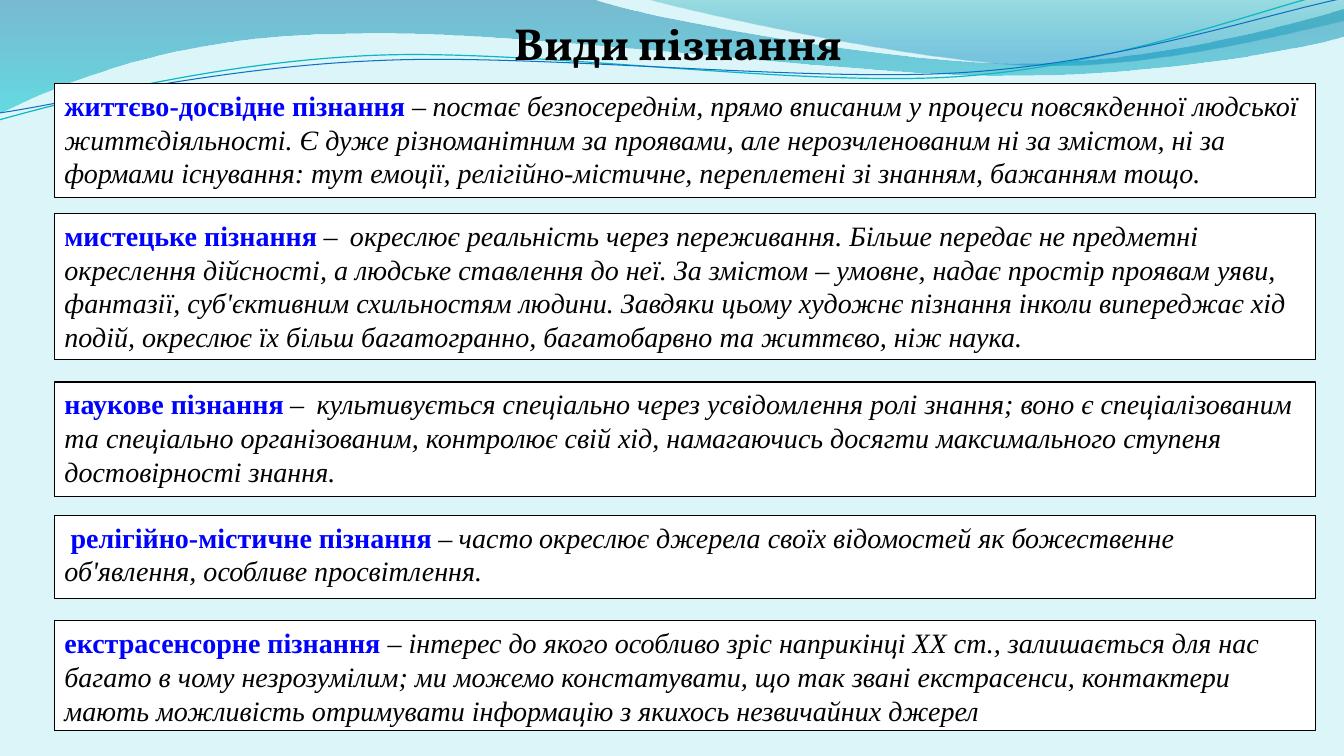
import math
from dataclasses import dataclass

from lxml import etree
from pptx import Presentation, util as u
from pptx.dml import color
from pptx.enum import shapes, text
from pptx.oxml import ns

LEFT, WIDTH = 0.54, 12.51

Point = tuple[float, float]


@dataclass
class Wave:
    start: Point
    segments: list[tuple[Point, ...]]
    stops: tuple[tuple[int, str, int], ...] = ()
    line: str = ""
    weight: float = 0
    turn: float = 0
    pivot: Point = (0, 0)


@dataclass
class Style:
    font: str
    size: int
    color: str
    bold: bool = False
    italic: bool = False


@dataclass
class Knowledge:
    top: float
    height: float
    runs: list[tuple[Style, str]]


BODY_FONT = "Times New Roman"
TITLE = Style("Vollkorn", 32, "000000", bold=True)
TERM = Style(BODY_FONT, 20, "0000FF", bold=True)
DASH = Style(BODY_FONT, 20, "000000")
BODY = Style(BODY_FONT, 20, "000000", italic=True)
GAP = Style("League Spartan", 18, "404040")
BOLD_GAP = Style("League Spartan", 18, "404040", bold=True)

WAVES = [
    Wave((0, -0.01), [
        ((5.87, -0.01),),
        ((6.34, 0.17), (8.85, 0.63), (10.11, 0.63)),
        ((11.38, 0.63), (12.78, 0.26), (13.33, 0.09)),
        ((13.35, 0.36),),
        ((13.11, 0.44), (11.6, 0.76), (9.94, 0.75)),
        ((8.29, 0.75), (5.09, 0.28), (3.43, 0.34)),
        ((1.72, 0.35), (0.61, 0.83), (-0.01, 1.13)),
        ((0, -0.01),),
    ], stops=((0, "0074A1", 45), (100, "00C6CF", 55))),
    Wave((6.39, -0.01), [
        ((6.79, 0.11), (9.09, 0.62), (10.25, 0.65)),
        ((11.41, 0.69), (12.82, 0.32), (13.33, 0.21)),
        ((13.33, 0),),
        ((6.39, -0.01),),
    ], stops=((0, "00A1A9", 30), (80, "008BBF", 45))),
    Wave((-0.01, 1.19), [
        ((0.64, 1.01), (2.11, 0.62), (3.69, 0.55)),
        ((5.27, 0.48), (7.9, 0.87), (9.5, 0.76)),
        ((11.1, 0.65), (12.52, 0.08), (13.31, -0.1)),
    ], line="0AB8BF", weight=0.85, turn=-2.7, pivot=(6.65, 0.58)),
    Wave((0, 1.12), [
        ((0.63, 1.03), (2.18, 0.66), (3.78, 0.6)),
        ((5.37, 0.53), (7.96, 0.82), (9.55, 0.72)),
        ((11.15, 0.62), (12.55, 0.14), (13.34, -0.02)),
    ], line="0F6FC6", weight=0.75, turn=-2.7, pivot=(6.67, 0.59)),
]

KINDS = [
    Knowledge(0.83, 1.13, [
        (TERM, "життєво-досвідне пізнання"), (BOLD_GAP, " "), (DASH, "–"), (BOLD_GAP, " "),
        (BODY, "постає безпосереднім, прямо вписаним у процеси повсякденної людської "
               "життєдіяльності. Є дуже різноманітним за проявами, але нерозчленованим ні за "
               "змістом, ні за формами існування: тут емоції, релігійно-містичне, переплетені "
               "зі знанням, бажанням тощо.")]),
    Knowledge(3.79, 1.14, [
        (TERM, "наукове пізнання"), (GAP, " "), (DASH, "–"), (GAP, "  "),
        (BODY, "культивується спеціально через усвідомлення ролі знання; воно є "
               "спеціалізованим та спеціально організованим, контролює свій хід, намагаючись "
               "досягти максимального ступеня достовірності знання.")]),
    Knowledge(5.11, 0.83, [
        (GAP, " "), (TERM, "релігійно-містичне пізнання"), (GAP, " "), (DASH, "–"),
        (GAP, " "), (BODY, "часто"), (GAP, " "),
        (BODY, "окреслює джерела своїх відомостей як божественне об'явлення, особливе "
               "просвітлення.")]),
    Knowledge(6.16, 1.09, [
        (TERM, "екстрасенсорне пізнання "),
        (BODY, "– інтерес до якого особливо зріс наприкінці XX ст., залишається для нас "
               "багато в чому незрозумілим; ми можемо констатувати, що так звані "
               "екстрасенси, контактери мають можливість отримувати інформацію з якихось "
               "незвичайних джерел")]),
    Knowledge(2.12, 1.45, [
        (TERM, "мистецьке пізнання"), (GAP, " "), (DASH, "–"), (GAP, "  "),
        (BODY, "окреслює реальність через переживання. Більше передає не предметні "
               "окреслення дійсності, а людське ставлення до неї. За змістом – умовне, надає "
               "простір проявам уяви, фантазії, суб'єктивним схильностям людини. Завдяки "
               "цьому художнє пізнання інколи випереджає хід подій, окреслює їх більш "
               "багатогранно, багатобарвно та життєво, ніж наука.")]),
]


def rgb(value: str) -> color.RGBColor:
    return color.RGBColor.from_string(value)


def level(point: Point, wave: Wave) -> tuple[int, int]:
    angle = math.radians(-wave.turn)
    dx, dy = point[0] - wave.pivot[0], point[1] - wave.pivot[1]
    return (u.Inches(wave.pivot[0] + dx * math.cos(angle) - dy * math.sin(angle)),
            u.Inches(wave.pivot[1] + dx * math.sin(angle) + dy * math.cos(angle)))


def bend(sp, segments: list[tuple[Point, ...]]) -> None:
    steps = iter(sp._element.findall(".//" + ns.qn("a:lnTo")))
    for segment in segments:
        first, *others = [next(steps) for _ in segment]
        if others:
            first.tag = ns.qn("a:cubicBezTo")
            for step in others:
                first.append(step[0])
                step.getparent().remove(step)


def fill_gradient(sp, stops: tuple[tuple[int, str, int], ...]) -> None:
    sp.fill.gradient()
    grad = sp._element.spPr.find(ns.qn("a:gradFill"))
    for child in list(grad):
        grad.remove(child)
    stop_list = etree.SubElement(grad, ns.qn("a:gsLst"))
    for position, value, opacity in stops:
        stop = etree.SubElement(stop_list, ns.qn("a:gs"), pos=str(position * 1000))
        tint = etree.SubElement(stop, ns.qn("a:srgbClr"), val=value)
        etree.SubElement(tint, ns.qn("a:alpha"), val=str(opacity * 1000))
    etree.SubElement(grad, ns.qn("a:lin"), ang="5400000", scaled="0")


def draw_wave(s, wave: Wave) -> None:
    points = [level(point, wave) for segment in wave.segments for point in segment]
    builder = s.shapes.build_freeform(*level(wave.start, wave))
    builder.add_line_segments(points, close=bool(wave.stops))
    sp = builder.convert_to_shape()
    bend(sp, wave.segments)
    sp.rotation = wave.turn
    sp.shadow.inherit = False
    if wave.stops:
        fill_gradient(sp, wave.stops)
        sp.line.fill.background()
    else:
        sp.fill.background()
        sp.line.color.rgb = rgb(wave.line)
        sp.line.width = u.Pt(wave.weight)


def add_run(p, style: Style, content: str) -> None:
    r = p.add_run()
    r.text = content
    r.font.name, r.font.size = style.font, u.Pt(style.size)
    r.font.color.rgb = rgb(style.color)
    r.font.bold, r.font.italic = style.bold, style.italic


def draw_knowledge(s, kind: Knowledge) -> None:
    sp = s.shapes.add_shape(shapes.MSO_SHAPE.RECTANGLE, u.Inches(LEFT), u.Inches(kind.top),
                            u.Inches(WIDTH), u.Inches(kind.height))
    sp.shadow.inherit = False
    sp.fill.solid()
    sp.fill.fore_color.rgb = rgb("FFFFFF")
    sp.line.color.rgb = rgb("000000")
    sp.line.width = u.Pt(0.75)
    tf = sp.text_frame
    tf.word_wrap = True
    tf.vertical_anchor = text.MSO_ANCHOR.TOP
    p = tf.paragraphs[0]
    p.alignment = text.PP_ALIGN.LEFT
    p.line_spacing = u.Pt(24)
    for style, content in kind.runs:
        add_run(p, style, content)


def place_title(s) -> None:
    title = s.shapes.title
    title.left, title.top = u.Inches(LEFT), u.Inches(0.11)
    title.width, title.height = u.Inches(12.37), u.Inches(0.63)
    tf = title.text_frame
    tf.word_wrap = True
    tf.auto_size = text.MSO_AUTO_SIZE.SHAPE_TO_FIT_TEXT
    tf.vertical_anchor = text.MSO_ANCHOR.TOP
    p = tf.paragraphs[0]
    p.alignment = text.PP_ALIGN.CENTER
    add_run(p, TITLE, "Види пізнання")
    title._element.getparent().append(title._element)


def main() -> None:
    prs = Presentation()
    prs.slide_width, prs.slide_height = u.Inches(13.33), u.Inches(7.5)
    s = prs.slides.add_slide(prs.slide_layouts[5])
    s.background.fill.solid()
    s.background.fill.fore_color.rgb = rgb("DBF5F9")
    for wave in WAVES:
        draw_wave(s, wave)
    for kind in KINDS:
        draw_knowledge(s, kind)
    place_title(s)
    prs.save("out.pptx")


if __name__ == "__main__":
    main()
